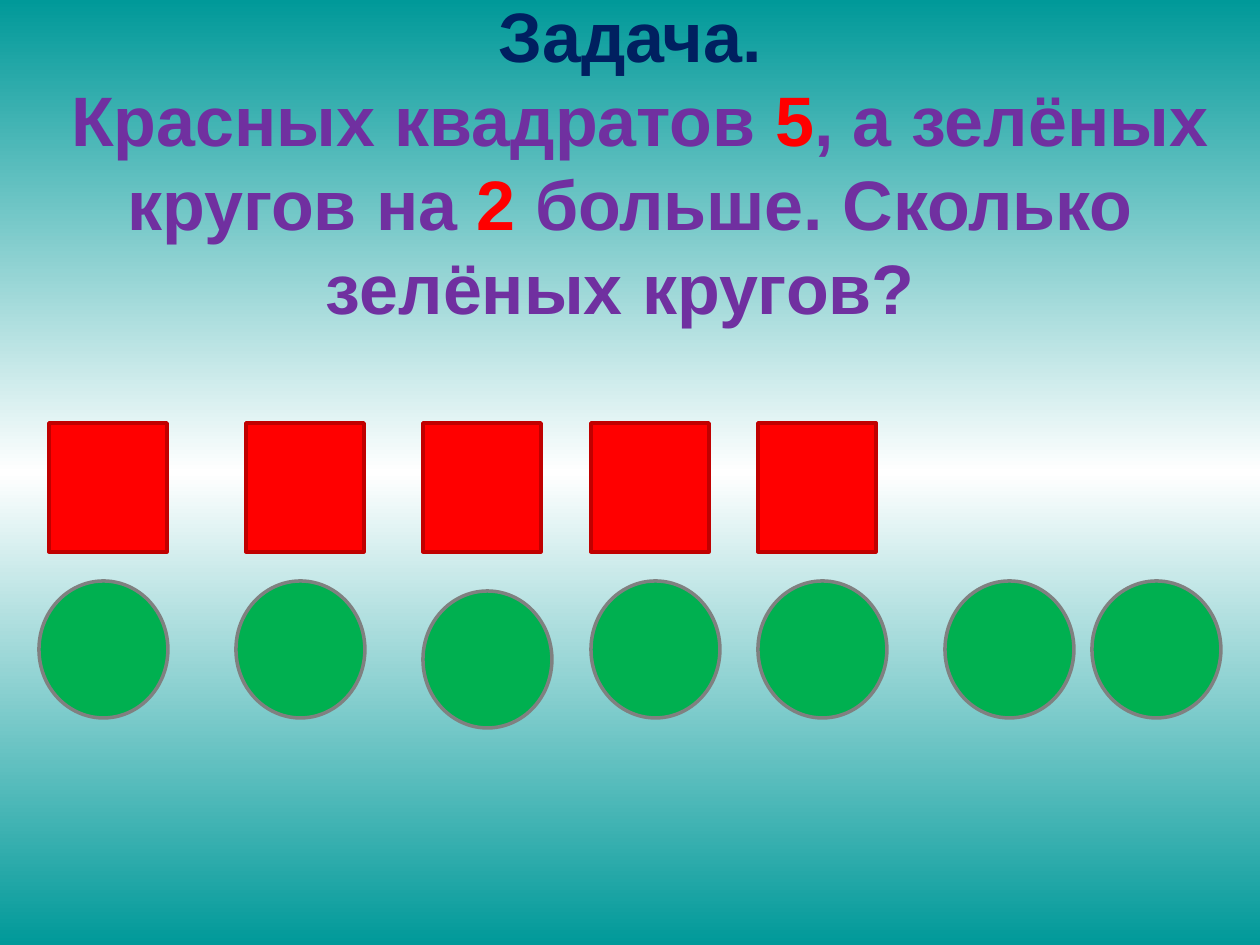
import copy

import pptx
import pptx.dml.color
import pptx.enum.shapes
import pptx.enum.text
import pptx.oxml.ns
import pptx.util

PX = 914400 // 126
SLIDE_WIDTH, SLIDE_HEIGHT = 1260, 945

BACKGROUND = [(0, "009999"), (0.5, "FFFFFF"), (1, "009999")]

NAVY, PURPLE, RED = "002060", "7030A0", "FF0000"
TASK = [
    ("Задача.\v", NAVY),
    (" Красных квадратов ", PURPLE),
    ("5", RED),
    (", а зелёных кругов на ", PURPLE),
    ("2", RED),
    (" больше. Сколько зелёных кругов? ", PURPLE),
]

SHAPES = pptx.enum.shapes.MSO_SHAPE
SQUARES = dict(kind=SHAPES.RECTANGLE, size=(118, 129), fill=RED, line="C00000",
               places=[(left, 423) for left in (49, 246, 423, 591, 758)])
CIRCLES = dict(kind=SHAPES.OVAL, size=(129, 137), fill="00B050", line="808080",
               places=[(39, 581), (236, 581), (423, 591), (591, 581),
                       (758, 581), (945, 581), (1092, 581)])


def px(*lengths):
    return [pptx.util.Emu(length * PX) for length in lengths]


def color(value):
    return pptx.dml.color.RGBColor.from_string(value)


def paint_background(slide, stops):
    fill = slide.background.fill
    fill.gradient()
    fill.gradient_angle = 90
    stop_list = next(slide.element.iter(pptx.oxml.ns.qn("a:gsLst")))
    while len(stop_list) < len(stops):
        stop_list.append(copy.deepcopy(stop_list[0]))
    for stop, (position, value) in zip(fill.gradient_stops, stops):
        stop.position = position
        stop.color.rgb = color(value)


def add_task(slide, spans):
    box = slide.shapes.add_textbox(*px(0, 108, SLIDE_WIDTH, 180))
    frame = box.text_frame
    frame.word_wrap = True
    frame.vertical_anchor = pptx.enum.text.MSO_ANCHOR.MIDDLE
    # The bottom inset lifts the four lines towards the top of the slide.
    frame.margin_top, frame.margin_bottom = px(0, 76)
    para = frame.paragraphs[0]
    para.alignment = pptx.enum.text.PP_ALIGN.CENTER
    para.line_spacing = pptx.util.Pt(48)
    para.font.name = "Arial"
    para.font.size = pptx.util.Pt(40)
    para.font.bold = True
    for text, value in spans:
        span = para.add_run()
        span.text = text.rstrip("\v")
        span.font.color.rgb = color(value)
        if text.endswith("\v"):
            para.add_line_break()


def add_figures(slide, kind, size, fill, line, places):
    for place in places:
        figure = slide.shapes.add_shape(kind, *px(*place, *size))
        figure.shadow.inherit = False
        figure.fill.solid()
        figure.fill.fore_color.rgb = color(fill)
        figure.line.color.rgb = color(line)
        figure.line.width = pptx.util.Pt(2)


def main():
    deck = pptx.Presentation()
    deck.slide_width, deck.slide_height = px(SLIDE_WIDTH, SLIDE_HEIGHT)
    slide = deck.slides.add_slide(deck.slide_layouts[6])
    paint_background(slide, BACKGROUND)
    add_task(slide, TASK)
    for row in (SQUARES, CIRCLES):
        add_figures(slide, **row)
    deck.save("out.pptx")


if __name__ == "__main__":
    main()
